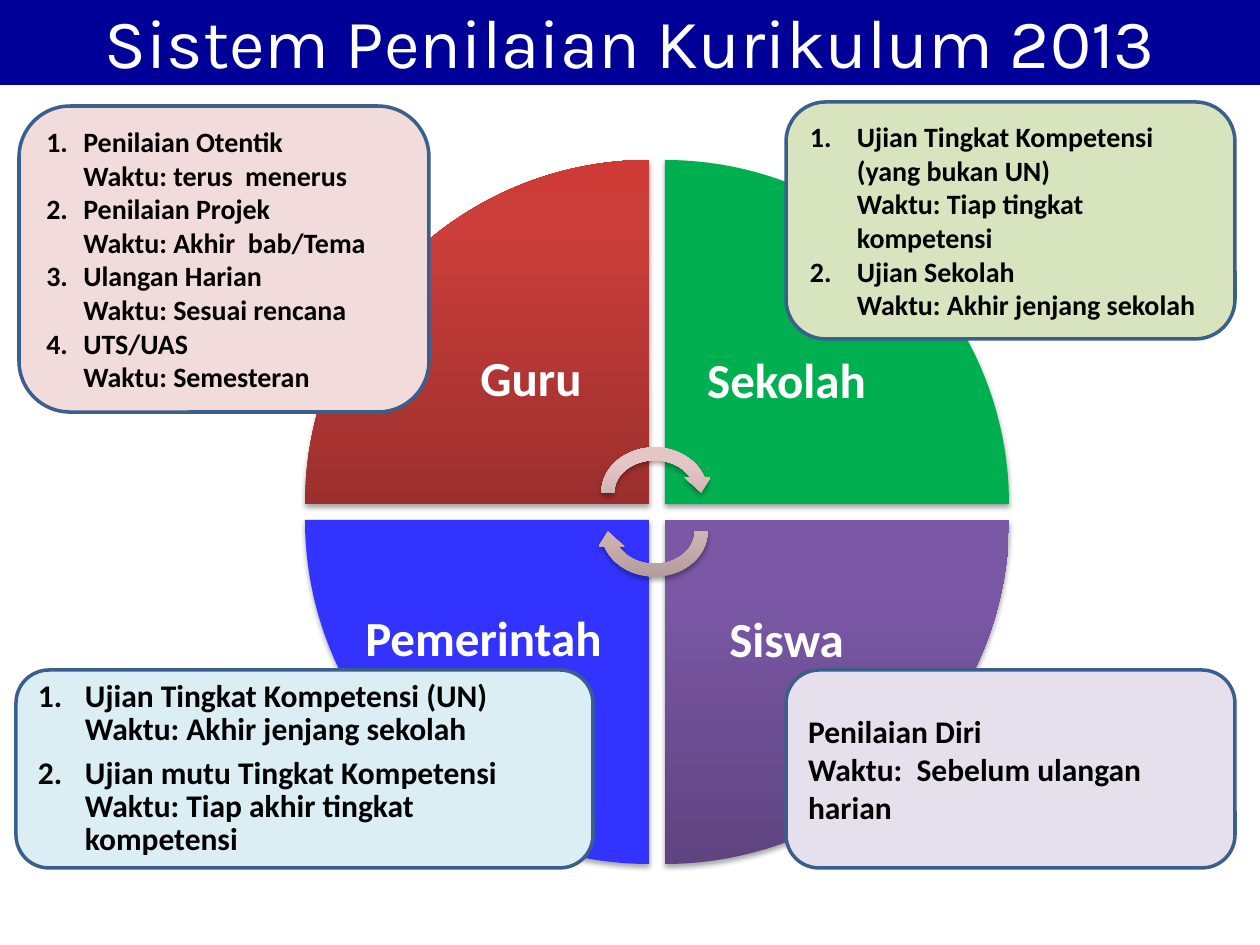
from dataclasses import dataclass

from lxml import etree
from pptx import Presentation
from pptx.dml.color import RGBColor
from pptx.enum.shapes import MSO_SHAPE
from pptx.enum.text import MSO_ANCHOR, PP_ALIGN
from pptx.oxml import parse_xml
from pptx.oxml.ns import nsdecls, qn
from pptx.util import Emu, Pt

RECT = MSO_SHAPE.RECTANGLE
ROUNDED = MSO_SHAPE.ROUNDED_RECTANGLE
WEDGE = MSO_SHAPE.PIE_WEDGE
CYCLE_ARROW = MSO_SHAPE.CIRCULAR_ARROW
LEFT, CENTER = PP_ALIGN.LEFT, PP_ALIGN.CENTER
MIDDLE = MSO_ANCHOR.MIDDLE
PX = 914400 / 126


@dataclass(frozen=True)
class Theme:
    title_font: str = "Karla"
    body_font: str = "Calibri"
    title_size: float = 39.6
    label_size: int = 28
    large_size: int = 18
    small_size: int = 16
    navy: str = "000099"
    white: str = "FFFFFF"
    black: str = "000000"
    outline: str = "3A5F8C"
    green: str = "00B050"
    blue: str = "3333FF"
    # Gradients run from bottom to top
    red: tuple = ("9C2F2D", "CB3E3A", "CE3B37")
    purple: tuple = ("5F4480", "7B58A6", "7C57A8")
    rose: tuple = ("B09998", "E5C6C6", "E6C7C6")
    pale_red: str = "F2DCDB"
    pale_green: str = "D7E4BD"
    pale_blue: str = "DBEEF4"
    pale_purple: str = "E6E0EC"


def px(value):
    return Emu(round(value * PX))


def apply(target, values):
    for name, value in values.items():
        setattr(target, name, value)


class SlideBuilder:
    def __init__(self, slide, theme):
        self.slide = slide
        self.theme = theme

    def shape(self, kind, box, fill, outline=None, rotation=0):
        shape = self.slide.shapes.add_shape(kind, *map(px, box))
        shape.shadow.inherit = False
        shape.rotation = rotation
        shape.fill.solid()
        if isinstance(fill, tuple):
            self.gradient(shape, fill)
        else:
            shape.fill.fore_color.rgb = RGBColor.from_string(fill)
        if outline:
            shape.line.color.rgb = RGBColor.from_string(outline)
            shape.line.width = Pt(2)
        else:
            shape.line.fill.background()
        return shape

    def gradient(self, shape, colors):
        stops = "".join(
            f'<a:gs pos="{position}"><a:srgbClr val="{color}"/></a:gs>'
            for position, color in zip((0, 80000, 100000), colors))
        properties = shape.element.spPr
        properties.replace(properties.find(qn("a:solidFill")), parse_xml(
            f'<a:gradFill {nsdecls("a")} rotWithShape="0"><a:gsLst>{stops}</a:gsLst>'
            '<a:lin ang="16200000" scaled="0"/></a:gradFill>'))

    def cycle_part(self, kind, box, fill, rotation):
        part = self.shape(kind, box, fill, rotation=rotation)
        part.element.spPr.find(qn("a:effectLst")).append(parse_xml(
            f'<a:outerShdw {nsdecls("a")} blurRad="40000" dist="23000" dir="5400000" '
            'rotWithShape="0"><a:srgbClr val="000000"><a:alpha val="35000"/>'
            '</a:srgbClr></a:outerShdw>'))

    def add_text(self, paragraph, text, size, color, font, bold=True):
        run = paragraph.add_run()
        run.text = text
        apply(run.font, {"name": font, "size": Pt(size), "bold": bold})
        run.font.color.rgb = RGBColor.from_string(color)

    def title(self, text, box):
        theme = self.theme
        frame = self.shape(RECT, box, theme.navy).text_frame
        apply(frame, {"word_wrap": True, "vertical_anchor": MIDDLE})
        heading = frame.paragraphs[0]
        heading.alignment = CENTER
        self.add_text(heading, text, theme.title_size, theme.white, theme.title_font, False)

    def label(self, text, box, spacing):
        frame = self.slide.shapes.add_textbox(*map(px, box)).text_frame
        apply(frame, {"word_wrap": True, "vertical_anchor": MIDDLE, "margin_left": 0,
                      "margin_right": 0, "margin_top": 0, "margin_bottom": 0})
        paragraph = frame.paragraphs[0]
        apply(paragraph, {"alignment": CENTER, "line_spacing": spacing})
        self.add_text(paragraph, text, self.theme.label_size, self.theme.white,
                      self.theme.body_font)

    def card(self, box, fill, size, items, indent=0, spacing=None, gap=0):
        """Each item is an assessment and its schedule; an indent numbers the items."""
        theme = self.theme
        frame = self.shape(ROUNDED, box, fill, theme.outline).text_frame
        apply(frame, {"word_wrap": True, "vertical_anchor": MIDDLE})
        for number, item in enumerate(items, 1):
            for row, text in enumerate(item):
                first = number == 1 and row == 0
                paragraph = frame.paragraphs[0] if first else frame.add_paragraph()
                if indent:
                    self.indent(paragraph, indent, number if row == 0 else None)
                layout = {"alignment": LEFT, "line_spacing": spacing}
                if gap and row == 0 and not first:
                    layout["space_before"] = Pt(gap)
                apply(paragraph, layout)
                self.add_text(paragraph, text, size, theme.black, theme.body_font)

    def indent(self, paragraph, width, number):
        properties = paragraph._p.get_or_add_pPr()
        properties.set("marL", str(int(px(width))))
        properties.set("indent", str(-int(px(width)) if number else 0))
        if number:
            etree.SubElement(properties, qn("a:buAutoNum"),
                             type="arabicPeriod", startAt=str(number))


def main():
    deck = Presentation()
    deck.slide_width, deck.slide_height = px(1260), px(945)
    theme = Theme()
    page = SlideBuilder(deck.slides.add_slide(deck.slide_layouts[6]), theme)

    page.title("Sistem Penilaian Kurikulum 2013", (0, -4, 1260, 89))

    # Four quarters of the circle, clockwise from the top left
    radius, step = 344, 360
    quarters = [(0, 0, theme.red), (1, 0, theme.green),
                (1, 1, theme.purple), (0, 1, theme.blue)]
    for turn, (column, row, fill) in enumerate(quarters):
        box = (305 + column * step, 160 + row * step, radius, radius)
        page.cycle_part(WEDGE, box, fill, turn * 90)

    # Cycle arrows in the middle
    for top, rotation in ((441, 0), (480, 180)):
        page.cycle_part(CYCLE_ARROW, (595, top, 119, 103), theme.rose, rotation)

    # Assessors
    for name, box, spacing in (
        ("Guru", (466, 341, 130, 72), 1.0),
        ("Sekolah", (665, 261, 243, 243), 0.9),
        ("Siswa", (665, 520, 243, 243), 0.9),
    ):
        page.label(name, box, spacing)

    # Assessments and their schedules
    page.card((786, 102, 449, 237), theme.pale_green, theme.small_size, [
        ("Ujian Tingkat Kompetensi (yang bukan UN)", "Waktu: Tiap tingkat kompetensi"),
        ("Ujian Sekolah", "Waktu: Akhir jenjang sekolah"),
    ], indent=47)
    page.card((786, 670, 449, 198), theme.pale_purple, theme.large_size, [
        ("Penilaian Diri", "Waktu:  Sebelum ulangan harian"),
    ])
    page.card((16, 670, 577, 198), theme.pale_blue, theme.large_size, [
        ("Ujian Tingkat Kompetensi (UN)", "Waktu: Akhir jenjang sekolah"),
        ("Ujian mutu Tingkat Kompetensi", "Waktu: Tiap akhir tingkat kompetensi"),
    ], indent=47, spacing=Pt(19), gap=6)
    page.card((19, 106, 410, 306), theme.pale_red, theme.small_size, [
        ("Penilaian Otentik", "Waktu: terus  menerus"),
        ("Penilaian Projek", "Waktu: Akhir  bab/Tema"),
        ("Ulangan Harian", "Waktu: Sesuai rencana"),
        ("UTS/UAS", "Waktu: Semesteran"),
    ], indent=37)

    # The last label lies above its card
    page.label("Pemerintah", (346, 601, 275, 72), 1.0)

    deck.save("out.pptx")


if __name__ == "__main__":
    main()
